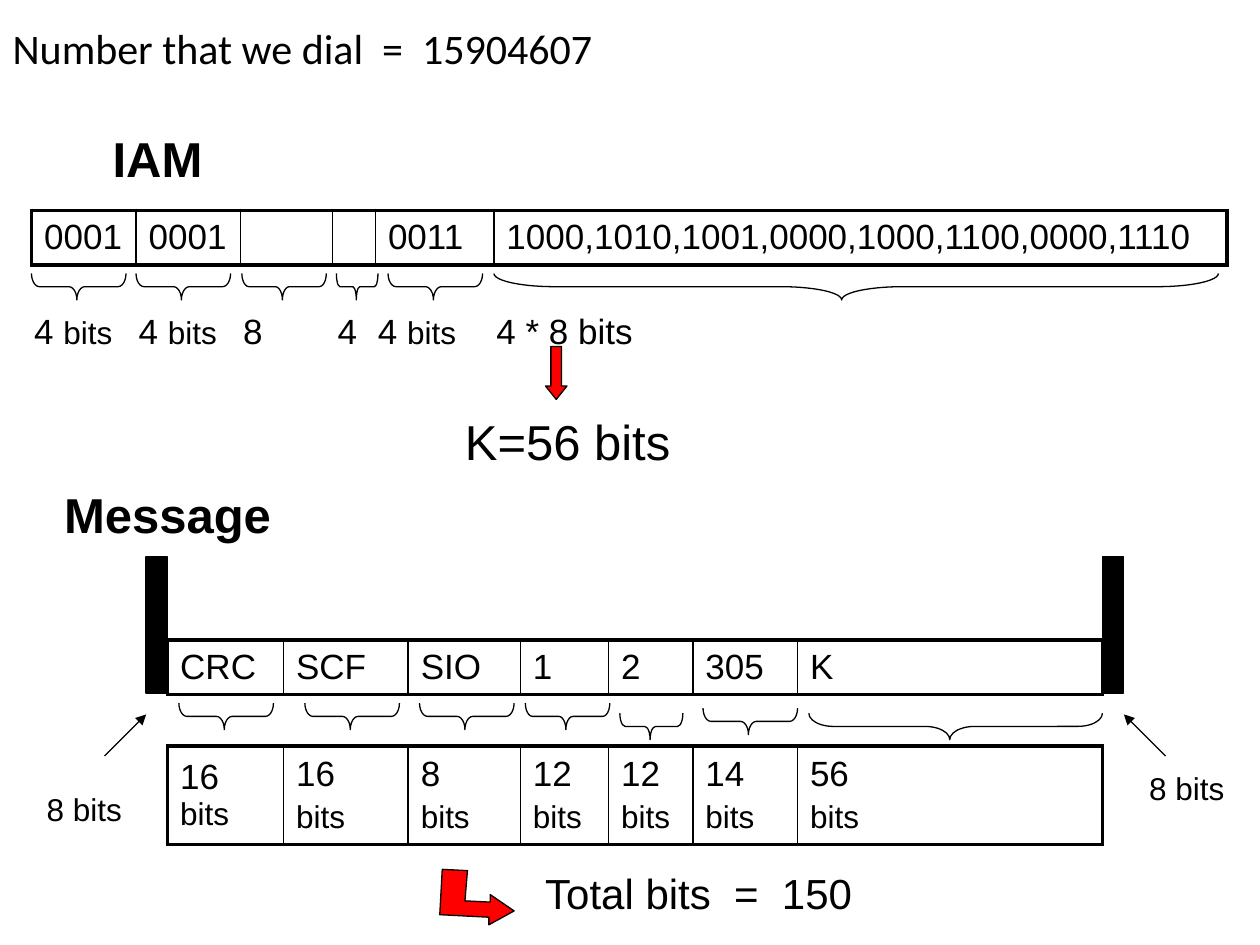
from itertools import accumulate

from lxml.etree import SubElement
from pptx import Presentation
from pptx.dml.color import RGBColor
from pptx.enum.shapes import MSO_CONNECTOR, MSO_SHAPE
from pptx.enum.text import MSO_ANCHOR, PP_ALIGN
from pptx.oxml.ns import qn
from pptx.util import Inches, Pt

BLACK, RED = "000000", "FF0000"
THIN, THICK = 1, 2.25


def rgb(value):
    """Return the colour for a hex string."""
    return RGBColor.from_string(value)


def add_run(p, text, size, name="Arial", bold=False):
    """Add a black run to a paragraph."""
    r = p.add_run()
    r.text = text
    formats = {"size": Pt(size), "name": name, "bold": bold}
    for key, value in formats.items():
        setattr(r.font, key, value)
    r.font.color.rgb = rgb(BLACK)


def add_label(slide, box, text, size, bold=False):
    """Place a centred one-line label in a box."""
    tf = slide.shapes.add_textbox(*map(Inches, box)).text_frame
    tf.word_wrap = False
    tf.vertical_anchor = MSO_ANCHOR.MIDDLE
    p = tf.paragraphs[0]
    p.alignment = PP_ALIGN.CENTER
    add_run(p, text, size, bold=bold)


def style_shape(sp, fill=None):
    """Give a shape a thin black outline and an optional fill."""
    sp.shadow.inherit = False
    if fill:
        sp.fill.solid()
        sp.fill.fore_color.rgb = rgb(fill)
    else:
        sp.fill.background()
    sp.line.color.rgb = rgb(BLACK)
    sp.line.width = Pt(0.75)


def add_preset(slide, kind, box, fill=None):
    """Place an outlined preset shape in a box."""
    sp = slide.shapes.add_shape(kind, *map(Inches, box))
    style_shape(sp, fill)
    return sp


def add_brace(slide, left, top, length, depth=0.21):
    """Place a brace that opens upward and spans the given length."""
    box = (left + (length - depth) / 2, top + (depth - length) / 2, depth, length)
    sp = add_preset(slide, MSO_SHAPE.LEFT_BRACE, box)
    sp.rotation = 270
    sp.adjustments[0] = 0.4 * length
    sp.adjustments[1] = 0.48


def add_arrow(slide, start, end):
    """Draw a thin line with a triangle at its end."""
    line = slide.shapes.add_connector(MSO_CONNECTOR.STRAIGHT, *map(Inches, start + end))
    line.line.color.rgb = rgb(BLACK)
    line.line.width = Pt(0.75)
    SubElement(line.line._get_or_add_ln(), qn("a:tailEnd"), type="triangle")
    SubElement(line._element.spPr, qn("a:effectLst"))


def set_borders(cell, widths):
    """Set left, right, top and bottom border widths of a cell; 0 hides one."""
    tc_pr = cell._tc.get_or_add_tcPr()
    for side, width in zip("LRTB", widths):
        ln = SubElement(tc_pr, qn(f"a:ln{side}"), w=str(Pt(width)))
        if width:
            fill = SubElement(ln, qn("a:solidFill"))
            SubElement(fill, qn("a:srgbClr"), val=BLACK)
        else:
            SubElement(ln, qn("a:noFill"))


def add_field_row(slide, left, top, height, widths, cells, bordered=True):
    """Place a one-row table; a cell is a list of paragraphs of (text, size) runs."""
    box = map(Inches, (left, top, sum(widths), height))
    table = slide.shapes.add_table(1, len(widths), *box).table
    table.first_row = table.horz_banding = False
    last = len(widths) - 1
    for i, (width, paragraphs) in enumerate(zip(widths, cells)):
        table.columns[i].width = Inches(width)
        cell = table.cell(0, i)
        sides = (THIN if i else THICK, THIN if i < last else THICK, THICK, THICK)
        set_borders(cell, sides if bordered else (0, 0, 0, 0))
        cell.fill.background()
        cell.vertical_anchor = MSO_ANCHOR.MIDDLE
        tf = cell.text_frame
        for n, runs in enumerate(paragraphs):
            p = tf.add_paragraph() if n else tf.paragraphs[0]
            p.space_before = Pt(0.2 * runs[0][1])
            for text, size in runs:
                add_run(p, text, size)


def plain(*texts):
    """Return cells that each hold one 20 point text, or nothing."""
    return [[[(text, 20)]] if text else [] for text in texts]


def add_title(slide, box):
    """Move and format the title placeholder."""
    sp = slide.shapes.title
    sp.left, sp.top, sp.width, sp.height = map(Inches, box)
    tf = sp.text_frame
    tf.word_wrap = True
    tf.vertical_anchor = MSO_ANCHOR.MIDDLE
    p = tf.paragraphs[0]
    p.alignment = PP_ALIGN.LEFT
    add_run(p, "Number that we dial  =  15904607", 24, "Calibri")


def add_iam(slide, left, top):
    """Place the IAM fields, their bit counts and the sum K."""
    add_label(slide, (left, top, 2, 0.5), "IAM", 28, True)
    digits = "1000,1010,1001,0000,1000,1100,0000,1110"
    add_field_row(slide, left, top + 0.67, 0.42, [0.83, 0.83, 0.73, 0.34, 0.94, 5.82],
                  plain("0001", "0001", "", "", "0011", digits))
    four = [[("4 ", 20), ("bits", 18)]]
    eight, short, total = plain("8", "4", "4 * 8 bits")
    add_field_row(slide, left - 0.08, top + 1.42, 0.42, [0.83, 0.83, 0.75, 0.32, 0.94, 5.82],
                  [four, four, eight, short, four, total], bordered=False)
    braces = [(0, 0.75), (0.83, 0.75), (1.67, 0.67), (2.42, 0.33), (2.83, 0.75), (3.67, 5.75)]
    for x, length in braces:
        add_brace(slide, left + x, top + 1.17, length)
    sp = add_preset(slide, MSO_SHAPE.DOWN_ARROW, (left + 4.08, top + 1.75, 0.17, 0.42), RED)
    sp.adjustments[1] = 0.625
    add_label(slide, (left + 3.17, top + 2.25, 2.17, 0.5), "K=56 bits", 28)


def add_message(slide, left, top):
    """Place the message frame between its flags, with the bits of each field."""
    add_label(slide, (left - 1, top, 2, 0.5), "Message", 28, True)
    widths = [0.92, 0.99, 0.89, 0.7, 0.67, 0.83, 2.42]
    right = left + sum(widths)
    add_field_row(slide, left, top + 1.25, 0.42, widths,
                  plain("CRC", "SCF", "SIO", "1", "2", "305", "K"))
    counts = [[[(n, 20)], [("bits", 18)]] for n in ("16", "8", "12", "12", "14", "56")]
    add_field_row(slide, left, top + 2.09, 0.74, widths,
                  [[[("16 ", 20), ("bits", 18)]]] + counts)
    lengths = [0.75, 0.75, 0.75, 0.67, 0.5, 0.75, 2.33]
    drops = [0, 0, 0, 0, 0.08, 0.04, 0.08]
    insets = [0.09, 0.17, 0.09, 0.04, 0.09, 0.08, 0.09]
    for x, length, drop, inset in zip(accumulate(widths, initial=left), lengths, drops, insets):
        add_brace(slide, x + inset, top + 1.75 + drop, length)
    for x, side, label_x, label_y in ((left - 0.17, -1, left - 1.16, top + 2.34),
                                      (right, 1, right + 0.17, top + 2.17)):
        add_preset(slide, MSO_SHAPE.RECTANGLE, (x, top + 0.59, 0.17, 1.08), BLACK)
        tip = x if side < 0 else x + 0.17
        add_arrow(slide, (tip + side * 0.33, top + 2.17), (tip, top + 1.84))
        add_label(slide, (label_x, label_y, 1, 0.5), "8 bits", 18)


def add_total(slide, left, top):
    """Place the bent arrow and the total bit count."""
    points = [(0.59, 0.33), (0.4, 0.2), (0.4, 0.26), (0.2, 0.25), (0.22, 0.01),
              (0.02, 0), (0, 0.36), (0.39, 0.38), (0.39, 0.44)]
    corners = [(Inches(left + x), Inches(top + y)) for x, y in points]
    builder = slide.shapes.build_freeform(*corners[0])
    builder.add_line_segments(corners[1:], close=True)
    style_shape(builder.convert_to_shape(), RED)
    add_label(slide, (left + 0.68, top + 0.02, 2.75, 0.33), "Total bits  =  150", 24)


def main():
    """Build and save the slide."""
    prs = Presentation()
    prs.slide_width, prs.slide_height = Inches(10), Inches(7.5)
    slide = prs.slides.add_slide(prs.slide_layouts[5])
    add_title(slide, (0, 0, 9, 0.75))
    add_iam(slide, 0.25, 1)
    add_message(slide, 1.33, 3.83)
    add_total(slide, 3.49, 6.9)
    prs.save("out.pptx")


if __name__ == "__main__":
    main()
